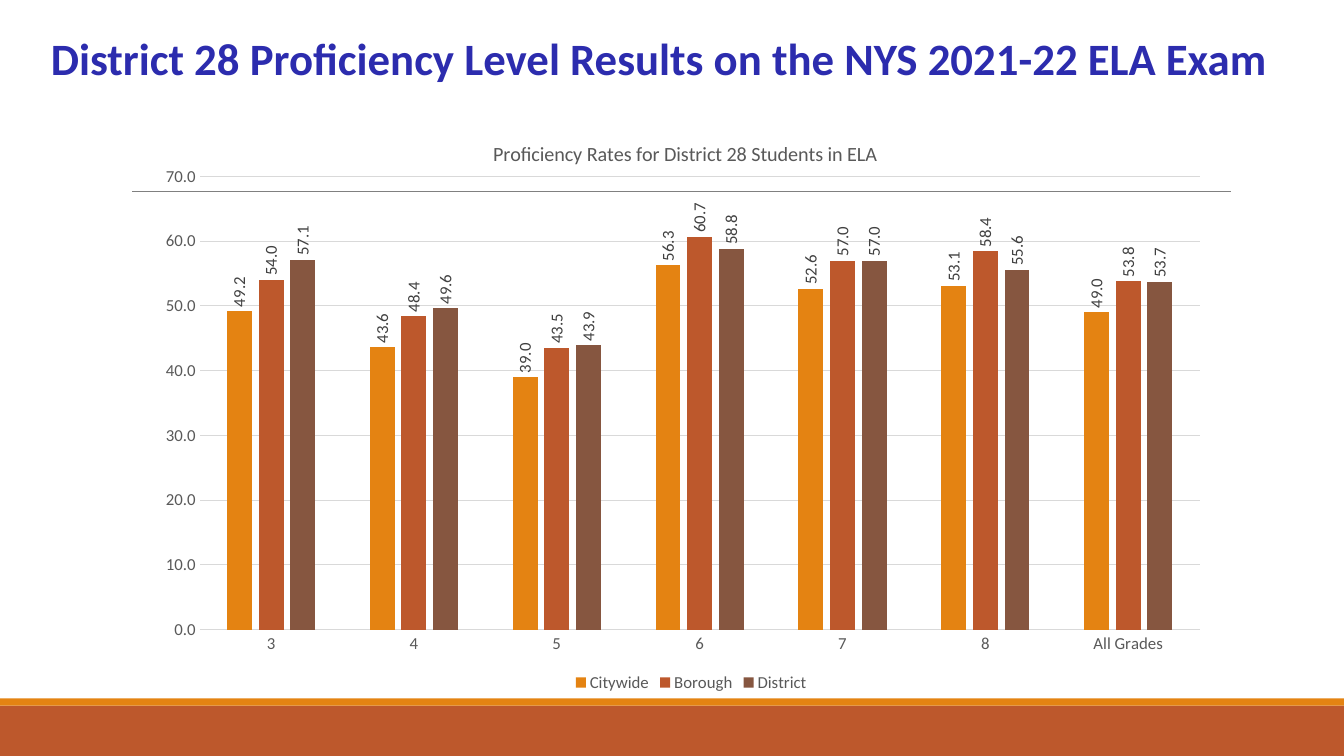
from lxml import etree
from pptx import Presentation
from pptx.chart.data import CategoryChartData
from pptx.dml.color import RGBColor
from pptx.enum.chart import XL_CHART_TYPE, XL_LABEL_POSITION, XL_LEGEND_POSITION, XL_TICK_MARK
from pptx.enum.shapes import MSO_CONNECTOR, MSO_SHAPE
from pptx.enum.text import MSO_ANCHOR, MSO_AUTO_SIZE, PP_ALIGN
from pptx.oxml import parse_xml
from pptx.oxml.ns import nsdecls, qn
from pptx.util import Inches, Pt

COLUMNS = XL_CHART_TYPE.COLUMN_CLUSTERED
OUTSIDE_END = XL_LABEL_POSITION.OUTSIDE_END
BOTTOM = XL_LEGEND_POSITION.BOTTOM
NO_TICK = XL_TICK_MARK.NONE

# Content
TITLE = "District 28 Proficiency Level Results on the NYS 2021-22 ELA Exam"
CHART_TITLE = "Proficiency Rates for District 28 Students in ELA"
GRADES = ["3", "4", "5", "6", "7", "8", "All Grades"]
RATES = [
    ("Citywide", "E48312", [49.2, 43.6, 39.0, 56.3, 52.6, 53.1, 49.0]),
    ("Borough", "BD582C", [54.0, 48.4, 43.5, 60.7, 57.0, 58.4, 53.8]),
    ("District", "865640", [57.1, 49.6, 43.9, 58.8, 57.0, 55.6, 53.7]),
]
BANDS = [(7.0, 0.5, "BD582C"), (6.93, 0.07, "E48312")]  # top, height, colour
FONT = "Calibri"
GREY, LABEL_GREY, GRID_GREY = "595959", "404040", "D9D9D9"
SLIDE_WIDTH, SLIDE_HEIGHT = 13.33, 7.5


def color(value):
    return RGBColor.from_string(value)


def set_font(font, size, value, bold=False):
    font.name, font.size, font.bold = FONT, Pt(size), bold
    font.color.rgb = color(value)


def set_line(line, value, width):
    line.color.rgb = color(value)
    line.width = Pt(width)


def set_layout(parent, position, **settings):
    """Place a chart part by fractions of the chart's size."""
    for old in parent.findall(qn("c:layout")):
        parent.remove(old)
    layout = parse_xml(f"<c:layout {nsdecls('c')}><c:manualLayout/></c:layout>")
    for tag, value in settings.items():
        etree.SubElement(layout[0], qn(f"c:{tag}")).set("val", str(value))
    parent.insert(position, layout)


deck = Presentation()
deck.slide_width, deck.slide_height = Inches(SLIDE_WIDTH), Inches(SLIDE_HEIGHT)
page = deck.slides.add_slide(deck.slide_layouts[5])

# Footer bands
for top, height, fill in BANDS:
    band = page.shapes.add_shape(
        MSO_SHAPE.RECTANGLE, 0, Inches(top), Inches(SLIDE_WIDTH), Inches(height))
    band.shadow.inherit = False
    band.fill.solid()
    band.fill.fore_color.rgb = color(fill)
    band.line.fill.background()

# Rule behind the chart
rule = page.shapes.add_connector(
    MSO_CONNECTOR.STRAIGHT, Inches(1.31), Inches(1.9), Inches(12.21), Inches(1.9))
set_line(rule.line, "808080", 0.5)
etree.SubElement(rule.element.spPr, qn("a:effectLst"))

# Title
title = page.shapes.title
title.left, title.top = Inches(0.39), Inches(0.34)
title.width, title.height = Inches(12.3), Inches(1.19)
frame = title.text_frame
frame.text = TITLE
frame.word_wrap = True
frame.auto_size = MSO_AUTO_SIZE.NONE
frame.vertical_anchor = MSO_ANCHOR.TOP
frame.margin_left = frame.margin_right = Inches(0.05)
para = frame.paragraphs[0]
para.alignment = PP_ALIGN.CENTER
para.line_spacing = 0.85
set_font(para.font, 32, "2C2CAE", bold=True)

# Chart
data = CategoryChartData(number_format="0.0")
data.categories = GRADES
for name, _, values in RATES:
    data.add_series(name, values)
chart = page.shapes.add_chart(
    COLUMNS, Inches(1.59), Inches(1.24), Inches(10.53), Inches(5.67), data).chart
set_font(chart.font, 12, "000000")
chart_root = chart.element.find(qn("c:chart"))
chart_root.addnext(parse_xml(
    f"<c:spPr {nsdecls('c', 'a')}><a:noFill/><a:ln><a:noFill/></a:ln></c:spPr>"))

# Chart title and legend
chart.has_title = True
chart.chart_title.text_frame.text = CHART_TITLE
set_font(chart.chart_title.text_frame.paragraphs[0].font, 14.4, GREY)
chart.chart_title.include_in_layout = False
set_layout(chart_root.find(qn("c:title")), 1,
           xMode="edge", yMode="edge", x=0.31, y=0.02)
chart.has_legend = True
chart.legend.position = BOTTOM
chart.legend.include_in_layout = False
set_font(chart.legend.font, 12, GREY)

# Axes
for axis in (chart.category_axis, chart.value_axis):
    axis.major_tick_mark = axis.minor_tick_mark = NO_TICK
    set_font(axis.tick_labels.font, 12, GREY)
set_line(chart.category_axis.format.line, GRID_GREY, 0.75)
scale = chart.value_axis
scale.minimum_scale, scale.maximum_scale, scale.major_unit = 0, 70, 10
scale.format.line.fill.background()
set_line(scale.major_gridlines.format.line, GRID_GREY, 0.75)
scale.tick_labels.number_format = "0.0"
scale.tick_labels.number_format_is_linked = False

# Columns and their upright labels
plot = chart.plots[0]
plot.vary_by_categories = False
plot.gap_width, plot.overlap = 219, -27
for series, (_, fill, _) in zip(plot.series, RATES):
    series.format.fill.solid()
    series.format.fill.fore_color.rgb = color(fill)
    labels = series.data_labels
    labels.show_value = True
    labels.position = OUTSIDE_END
    labels.number_format = "0.0"
    labels.number_format_is_linked = False
    set_font(labels.font, 12, LABEL_GREY)
for body in chart.element.xpath(".//c:dLbls/c:txPr/a:bodyPr"):
    body.set("rot", "-5400000")
    body.set("vert", "horz")
set_layout(chart_root.find(qn("c:plotArea")), 0, layoutTarget="inner",
           xMode="edge", yMode="edge", x=0.037, y=0.09, w=0.942, h=0.793)

deck.save("out.pptx")
